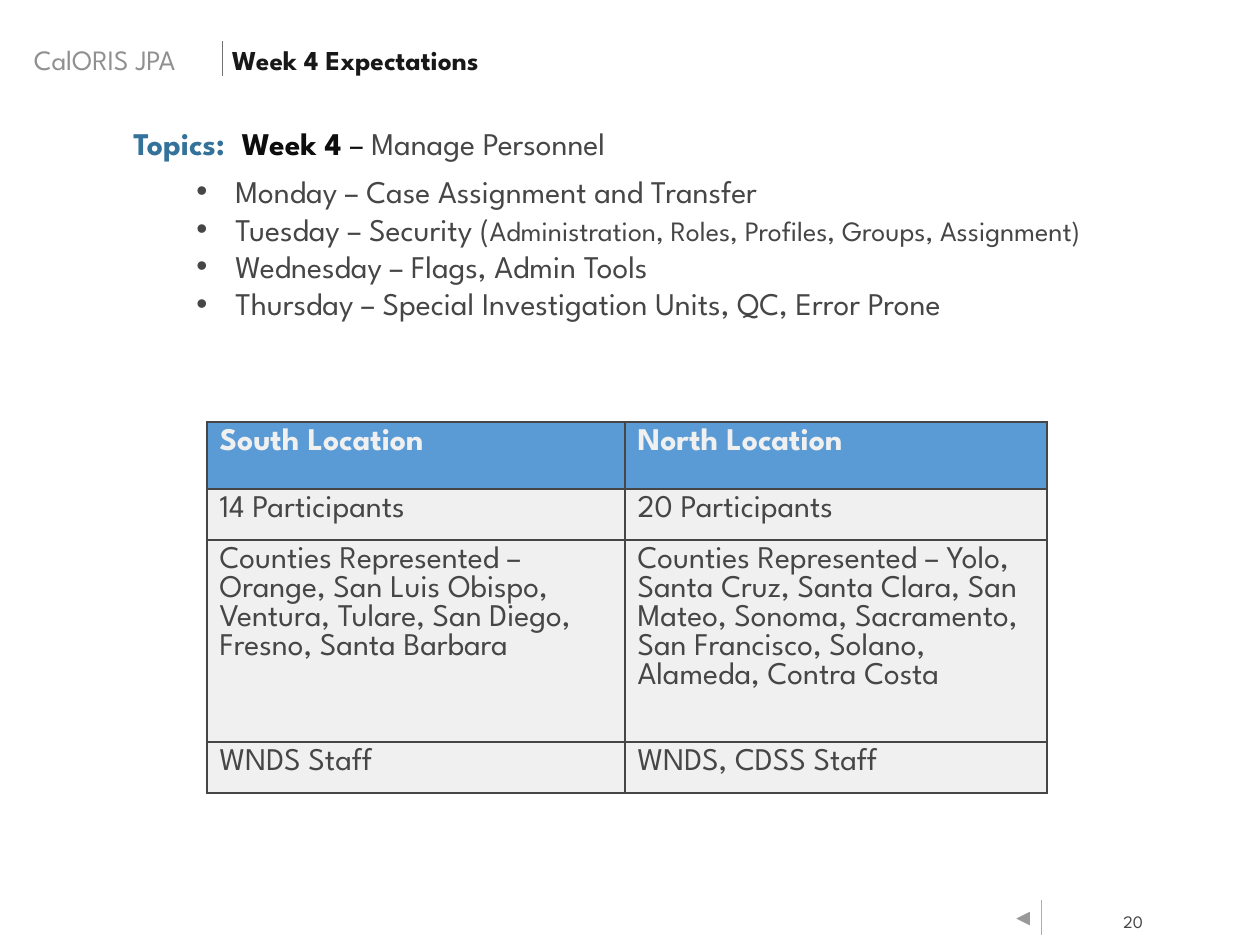
from lxml.etree import SubElement
from pptx import Presentation
from pptx.dml.color import RGBColor
from pptx.enum.shapes import MSO_CONNECTOR, MSO_SHAPE
from pptx.enum.text import MSO_ANCHOR, PP_ALIGN
from pptx.oxml.ns import qn
from pptx.util import Emu, Pt

FONT = "League Spartan"
GREY, INK, BLUE, PALE = "464646", "0D0D0D", "35729B", "F0F0F0"
BULLETS = [
    [("Monday – Case Assignment and Transfer", {})],
    [("Tuesday – Security (", {}),
     ("Administration, Roles, Profiles, Groups, Assignment)", {"size": 16})],
    [("Wednesday – Flags, Admin Tools", {})],
    [("Thursday – Special Investigation Units, QC, Error Prone", {})],
]
LOCATIONS = [
    ("South Location", "North Location"),
    ("14 Participants", "20 Participants"),
    ("Counties Represented – Orange, San Luis Obispo, Ventura, Tulare, "
     "San Diego, Fresno, Santa Barbara",
     "Counties Represented – Yolo, Santa Cruz, Santa Clara, San Mateo, Sonoma, "
     "Sacramento, San Francisco, Solano, Alameda, Contra Costa"),
    ("WNDS Staff", "WNDS, CDSS Staff"),
]


def px(n):
    return Emu(round(n * 914400 / 126))


def rgb(value):
    return RGBColor.from_string(value)


def add_run(p, text, size=18, color=GREY, bold=False):
    r = p.add_run()
    r.text = text
    for name, value in {"name": FONT, "size": Pt(size), "bold": bold}.items():
        setattr(r.font, name, value)
    r.font.color.rgb = rgb(color)


def add_text_box(s, box, **frame):
    """Add a wrapping text box; frame overrides text frame attributes."""
    tf = s.shapes.add_textbox(*map(px, box)).text_frame
    for name, value in {"word_wrap": True, **frame}.items():
        setattr(tf, name, value)
    return tf


def add_rule(s, x, top, bottom, color):
    """Add a thin vertical line."""
    line = s.shapes.add_connector(MSO_CONNECTOR.STRAIGHT, *map(px, (x, top, x, bottom)))
    line.line.color.rgb = rgb(color)
    line.line.width = Pt(0.5)
    SubElement(line._element.spPr, qn("a:effectLst"))


def add_header(s, x, y, w, h):
    frame = {"margin_left": 0, "margin_right": 0, "vertical_anchor": MSO_ANCHOR.MIDDLE}
    tf = add_text_box(s, (x, y, 295, h), **frame)
    add_run(tf.paragraphs[0], "CalORIS JPA", 16, "909090")
    add_rule(s, x + 188, y + 5, y + 40, "767171")
    tf = add_text_box(s, (x + 198, y + 2, w - 198, h), **frame)
    p = tf.paragraphs[0]
    p.line_spacing = 0.9
    add_run(p, "Week 4 Expectations", 15.6, "181818", True)


def indent(p, left, hanging):
    pPr = p._p.get_or_add_pPr()
    pPr.set("marL", str(px(left)))
    pPr.set("indent", str(-px(hanging)))
    return pPr


def add_topics(s, x, y, w, h):
    tf = add_text_box(s, (x, y, w, h))
    p = tf.paragraphs[0]
    p.space_before = p.space_after = Pt(6)
    indent(p, 102, 39)
    add_run(p, "Topics:  ", color=BLUE, bold=True)
    add_run(p, "Week 4 ", color=INK, bold=True)
    add_run(p, "– ", color=INK)
    add_run(p, "Manage Personnel")
    for parts in BULLETS:
        p = tf.add_paragraph()
        p.line_spacing = Pt(21.4)
        pPr = indent(p, 165, 39)
        SubElement(pPr, qn("a:buFont"), typeface="Arial")
        SubElement(pPr, qn("a:buChar"), char="•")
        for text, style in parts:
            add_run(p, text, **style)


def add_borders(cell):
    tcPr = cell._tc.get_or_add_tcPr()
    for i, side in enumerate(("lnL", "lnR", "lnT", "lnB")):
        ln = tcPr.makeelement(qn(f"a:{side}"), {"w": str(Pt(1))})
        SubElement(SubElement(ln, qn("a:solidFill")), qn("a:srgbClr"), val=GREY)
        tcPr.insert(i, ln)


def add_locations(s, x, y, widths, heights):
    box = map(px, (x, y, sum(widths), sum(heights)))
    table = s.shapes.add_table(len(heights), len(widths), *box).table
    for column, width in zip(table.columns, widths):
        column.width = px(width)
    for i, (row, height, texts) in enumerate(zip(table.rows, heights, LOCATIONS)):
        row.height = px(height)
        head = i == 0
        for cell, text in zip(row.cells, texts):
            cell.fill.solid()
            cell.fill.fore_color.rgb = rgb("5B9BD5" if head else PALE)
            add_borders(cell)
            add_run(cell.text_frame.paragraphs[0], text,
                    color=PALE if head else GREY, bold=head)


def add_footer(s, x, y, w, h):
    button = s.shapes.add_shape(MSO_SHAPE.ACTION_BUTTON_FORWARD_OR_NEXT,
                                *map(px, (x, y + 7, 18, 23)))
    button.rotation = 180
    button.shadow.inherit = False
    button.fill.solid()
    button.fill.fore_color.rgb = rgb("FFFFFF")
    button.line.fill.background()
    add_rule(s, x + 27, y, y + 35, "AFABAB")
    tf = add_text_box(s, (x + w - 40, y + 6, 40, h - 6), word_wrap=False,
                      margin_left=px(10), margin_right=px(10),
                      margin_top=px(5), margin_bottom=px(5))
    p = tf.paragraphs[0]
    p.alignment = PP_ALIGN.RIGHT
    add_run(p, "20", 10)


def main():
    prs = Presentation()
    prs.slide_width, prs.slide_height = px(1260), px(945)
    s = prs.slides.add_slide(prs.slide_layouts[6])
    add_footer(s, 1014, 900, 139, 36)
    add_header(s, 34, 36, 1115, 47)
    add_topics(s, 58, 118, 1068, 451)
    add_locations(s, 207, 422, (418, 422), (67, 51, 202, 51))
    prs.save("out.pptx")


if __name__ == "__main__":
    main()
